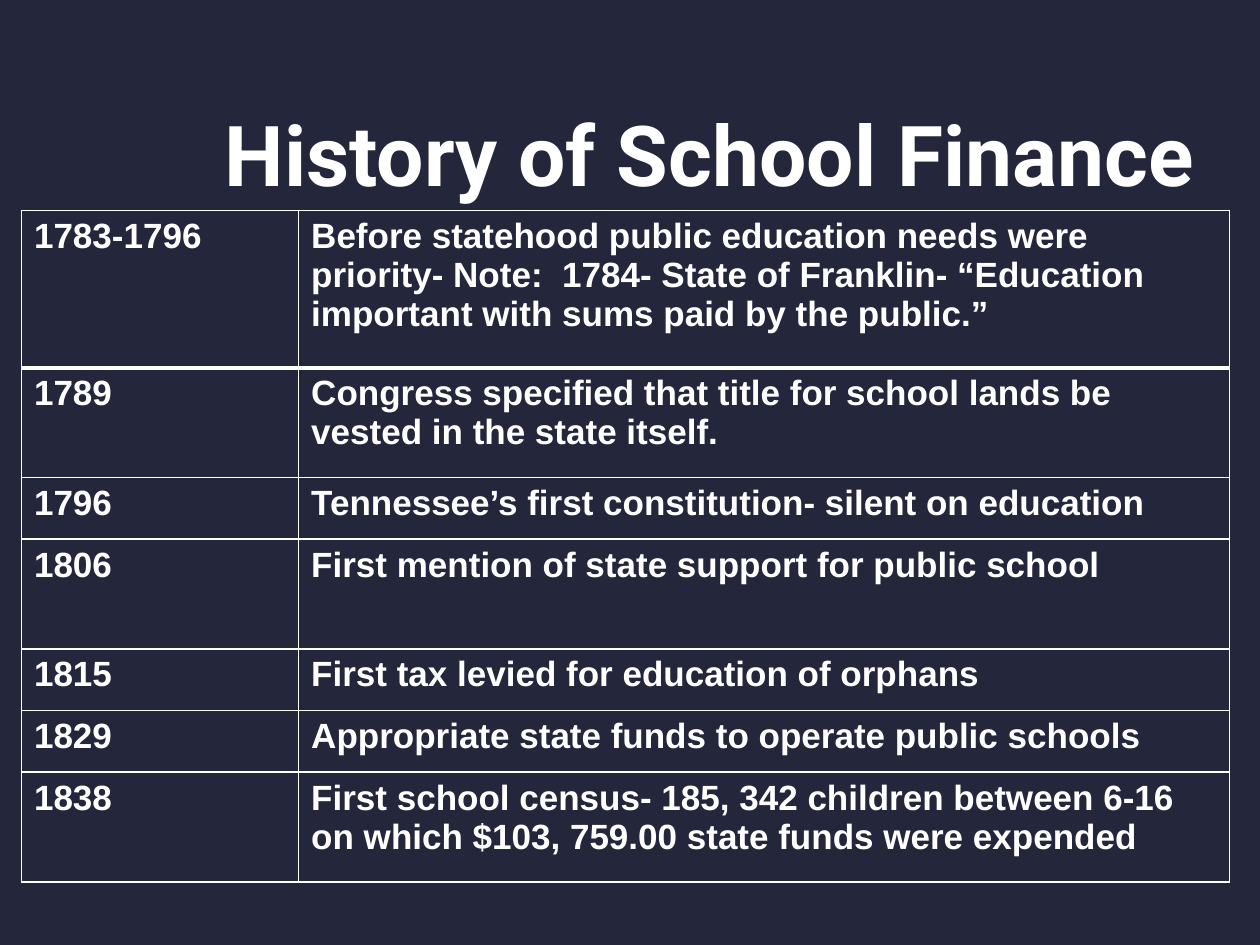
from lxml import etree
from pptx import Presentation
from pptx.dml.color import RGBColor
from pptx.enum.text import MSO_ANCHOR, PP_ALIGN
from pptx.oxml.ns import qn
from pptx.util import Inches, Pt

BOTTOM = MSO_ANCHOR.BOTTOM
RIGHT = PP_ALIGN.RIGHT
NAVY, WHITE = "24263C", "FFFFFF"
COLUMNS = [2.2, 7.39]
EVENTS = [
    (1.25, "1783-1796", "Before statehood public education needs were priority- Note:  1784- State of Franklin- “Education important with sums paid by the public.”"),
    (0.87, "1789", "Congress specified that title for school lands be vested in the state itself."),
    (0.49, "1796", "Tennessee’s first constitution- silent on education"),
    (0.87, "1806", "First mention of state support for public school"),
    (0.49, "1815", "First tax levied for education of orphans"),
    (0.49, "1829", "Appropriate state funds to operate public schools"),
    (0.87, "1838", "First school census- 185, 342 children between 6-16 on which $103, 759.00 state funds were expended"),
]


def color(value):
    return RGBColor.from_string(value)


def add_span(para, text, font, size):
    span = para.add_run()
    span.text = text
    span.font.name = font
    span.font.size = Pt(size)
    span.font.bold = True
    span.font.color.rgb = color(WHITE)


deck = Presentation()
deck.slide_width, deck.slide_height = Inches(10), Inches(7.5)
page = deck.slides.add_slide(deck.slide_layouts[6])
page.background.fill.solid()
page.background.fill.fore_color.rgb = color(NAVY)

title = page.shapes.add_textbox(Inches(0.25), 0, Inches(9.33), Inches(1.61)).text_frame
title.word_wrap = True
title.vertical_anchor = BOTTOM
title.margin_bottom = 0
title.paragraphs[0].alignment = RIGHT
add_span(title.paragraphs[0], "History of School Finance", "Roboto", 48)

heights = [event[0] for event in EVENTS]
timeline = page.shapes.add_table(
    len(EVENTS), len(COLUMNS), Inches(0.17), Inches(1.67),
    Inches(sum(COLUMNS)), Inches(sum(heights))).table
timeline.first_row = timeline.horz_banding = False
for column, width in zip(timeline.columns, COLUMNS):
    column.width = Inches(width)

for row, (height, *texts) in enumerate(EVENTS):
    timeline.rows[row].height = Inches(height)
    for column, text in enumerate(texts):
        cell = timeline.cell(row, column)
        add_span(cell.text_frame.paragraphs[0], text, "Arial", 20)
        properties = cell._tc.get_or_add_tcPr()
        for side in ("lnL", "lnR", "lnT", "lnB"):
            thick = (row, side) in ((0, "lnB"), (1, "lnT"))
            line = etree.SubElement(properties, qn("a:" + side), w=str(Pt(3 if thick else 1)))
            fill = etree.SubElement(line, qn("a:solidFill"))
            etree.SubElement(fill, qn("a:srgbClr"), val=WHITE)
        cell.fill.background()

deck.save("out.pptx")
